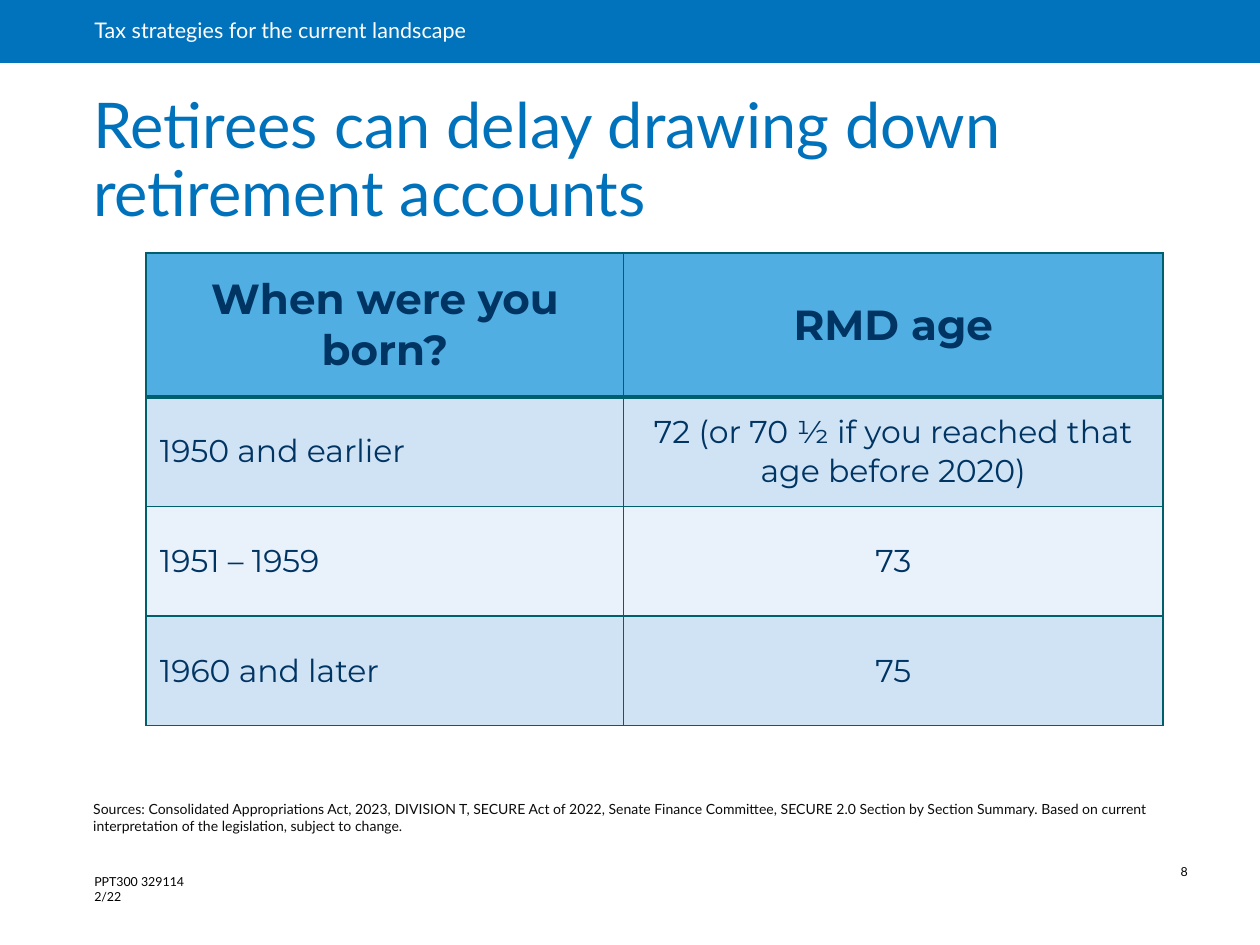
from pptx import Presentation
from pptx.dml.color import RGBColor
from pptx.enum.shapes import MSO_SHAPE
from pptx.enum.text import MSO_ANCHOR, PP_ALIGN
from pptx.oxml import parse_xml
from pptx.oxml.ns import nsdecls
from pptx.util import Inches, Pt

RECT = MSO_SHAPE.RECTANGLE
TOP, MIDDLE, BOTTOM = MSO_ANCHOR.TOP, MSO_ANCHOR.MIDDLE, MSO_ANCHOR.BOTTOM
LEFT, CENTER = PP_ALIGN.LEFT, PP_ALIGN.CENTER

HEADING, BODY = "Lato", "Montserrat"
BLUE, TITLE_BLUE, NAVY, TEAL = "0073BC", "0072BC", "003463", "005F6C"
HEADER_FILL, BAND_FILLS = "50AEE2", ("D0E3F4", "E9F2FA")
WHITE, BLACK, INK = "FFFFFF", "000000", "0C0C0C"

ROWS = [
    ("When were you born?", "RMD age"),
    ("1950 and earlier", "72 (or 70 ½ if you reached that age before 2020)"),
    ("1951 – 1959", "73"),
    ("1960 and later", "75"),
]
SOURCES = (
    "Sources: Consolidated Appropriations Act, 2023, DIVISION T, SECURE Act of 2022, "
    "Senate Finance Committee, SECURE 2.0 Section by Section Summary. Based on current "
    "interpretation of the legislation, subject to change."
)


def rgb(value):
    """Turn a hex string into a colour."""
    return RGBColor.from_string(value)


def write(tf, text, size, color, font=HEADING, bold=False, align=LEFT, spacing=None):
    """Set the text of a frame and format all of its runs."""
    tf.text = text
    for p in tf.paragraphs:
        p.alignment = align
        if spacing:
            p.line_spacing = spacing
        for r in p.runs:
            r.font.name, r.font.size, r.font.bold = font, Pt(size), bold
            r.font.color.rgb = rgb(color)


def set_frame(tf, anchor, insets):
    """Set wrapping, anchor and the left, top, right and bottom insets."""
    tf.word_wrap = True
    tf.vertical_anchor = anchor
    tf.margin_left, tf.margin_top, tf.margin_right, tf.margin_bottom = map(Inches, insets)


def add_text(s, box, text, size, color, anchor=TOP, insets=(0.11, 0.06, 0.11, 0.06), spacing=None):
    """Add a text box filling the given box."""
    tf = s.shapes.add_textbox(*map(Inches, box)).text_frame
    set_frame(tf, anchor, insets)
    write(tf, text, size, color, spacing=spacing)


def add_banner(s, box, text):
    """Add the coloured strip with the presentation name."""
    sp = s.shapes.add_shape(RECT, *map(Inches, box))
    sp.shadow.inherit = False
    sp.fill.solid()
    sp.fill.fore_color.rgb = rgb(BLUE)
    sp.line.fill.background()
    set_frame(sp.text_frame, MIDDLE, (0.75, 0, 0.22, 0))
    write(sp.text_frame, text, 12.3, WHITE, spacing=0.9)


def set_borders(cell, widths):
    """Draw the left, right, top and bottom borders of a cell."""
    props = cell._tc.get_or_add_tcPr()
    for i, (side, width) in enumerate(zip("LRTB", widths)):
        props.insert(i, parse_xml(
            f'<a:ln{side} {nsdecls("a")} w="{Pt(width)}"><a:solidFill>'
            f'<a:srgbClr val="{TEAL}"/></a:solidFill></a:ln{side}>'))


def add_age_table(s, box, first_width, header_height):
    """Add the table of birth years and distribution ages."""
    left, top, width, height = box
    table = s.shapes.add_table(len(ROWS), 2, *map(Inches, box)).table
    for col, w in zip(table.columns, (first_width, width - first_width)):
        col.width = Inches(w)
    row_height = (height - header_height) / (len(ROWS) - 1)
    for i, texts in enumerate(ROWS):
        header = i == 0
        table.rows[i].height = Inches(header_height if header else row_height)
        for j, text in enumerate(texts):
            cell = table.cell(i, j)
            cell.fill.solid()
            cell.fill.fore_color.rgb = rgb(HEADER_FILL if header else BAND_FILLS[(i - 1) % 2])
            cell.vertical_anchor = MIDDLE
            cell.margin_left = cell.margin_right = Inches(0.11)
            cell.margin_top = cell.margin_bottom = Inches(0.06)
            set_borders(cell, (1, 1, 3 if i == 1 else 1, 3 if header else 1))
            write(cell.text_frame, text, 24 if header else 18, NAVY, BODY, header,
                  CENTER if header or j else LEFT)


def add_footer(s, box, code, number):
    """Add the document code and the page number."""
    left, top, width, height = box
    add_text(s, (left, top + 0.06, 1.04, height), code, 7.1, BLACK, insets=(0.1, 0.05, 0.1, 0.05))
    add_text(s, (left + width - 0.56, top, 0.56, 0.2), number, 7.1, BLACK,
             insets=(0, 0.04, 0.04, 0.04), spacing=0.9)


def main():
    """Build the slide and save it."""
    prs = Presentation()
    prs.slide_width, prs.slide_height = Inches(10), Inches(7.5)
    s = prs.slides.add_slide(prs.slide_layouts[6])
    add_banner(s, (0, 0, 10, 0.5), "Tax strategies for the current landscape")
    add_text(s, (0.63, 0.65, 8.62, 1.24), "Retirees can delay drawing down retirement accounts",
             36, TITLE_BLUE, BOTTOM, spacing=0.9)
    add_age_table(s, (1.16, 2.01, 8.07, 3.75), 3.79, 1.14)
    add_text(s, (0.63, 6.28, 8.62, 0.4), SOURCES, 8, INK, BOTTOM)
    add_footer(s, (0.65, 6.83, 9.28, 0.34), "PPT300 329114\n2/22", "8")
    prs.save("out.pptx")


if __name__ == "__main__":
    main()
